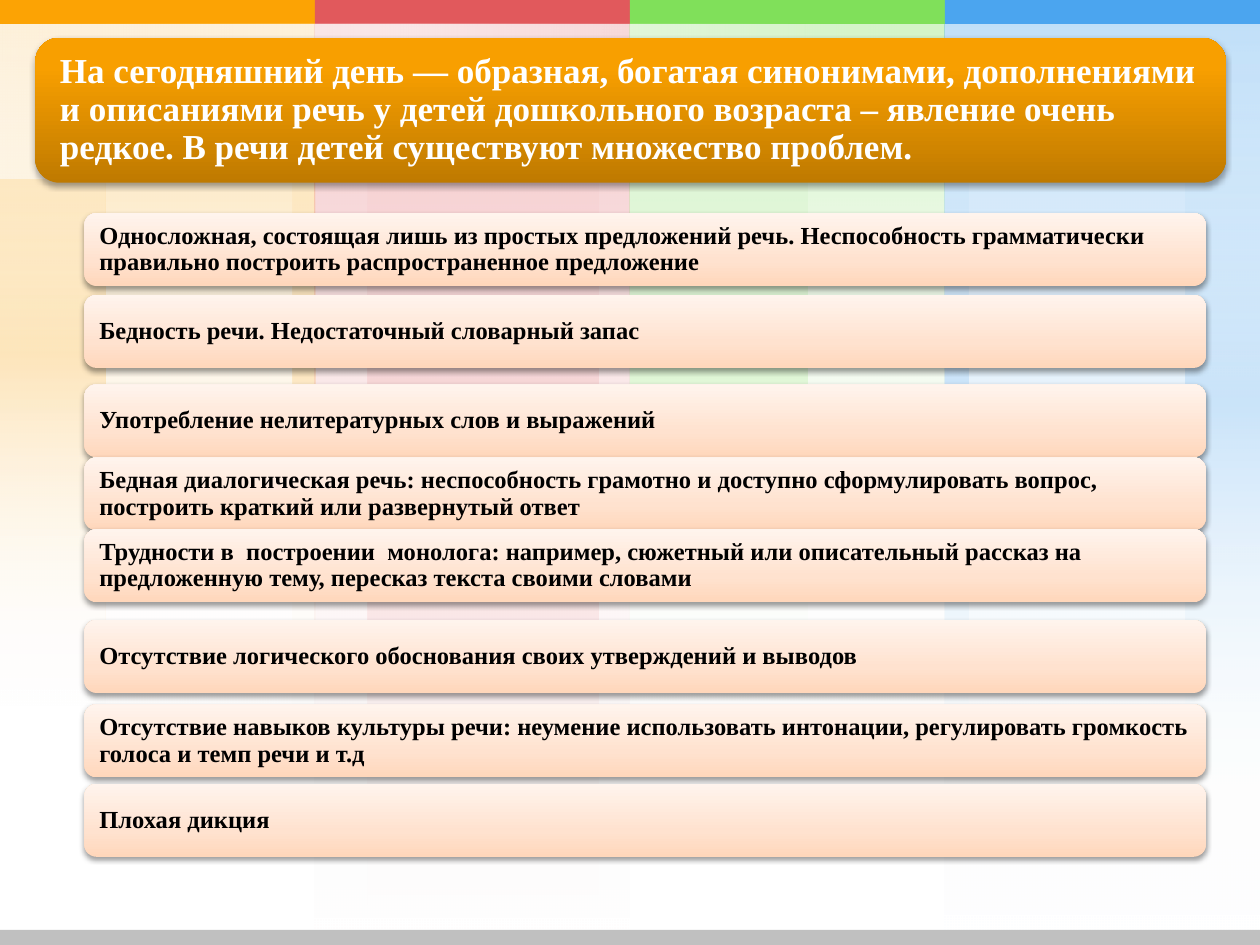
from lxml.etree import SubElement
from pptx import Presentation
from pptx.dml.color import RGBColor
from pptx.enum.shapes import MSO_SHAPE
from pptx.enum.text import MSO_ANCHOR, PP_ALIGN
from pptx.oxml.ns import qn
from pptx.util import Inches, Pt

FONT = "Times New Roman"
WHITE = "FFFFFF"
BAND_WIDTH = 2.5
BANDS = [
    ("FCA304", 5.62, [(2.32, 0.18, 5.62), (0, 0.84, 5.62)]),
    ("E1595C", 7.5, [(2.92, 1.83, 7.5)]),
    ("80E05A", 5.62, [(5, 1.41, 5.62)]),
    ("4BA5EF", 7.47, [(7.5, 0.19, 6.37), (9.41, 0.59, 6.37)]),
]
HAZE_GLOWS = [(4.16, -2.85, 0.1, 8.42), (3.06, -2.87, 0.29, 6.41)]
HAZE_VEIL = (3.15, -2.95, 1.22, 7.51)

TITLE = (
    "На сегодняшний день — образная, богатая синонимами, дополнениями и описаниями "
    "речь у детей дошкольного возраста – явление очень редкое. В речи детей "
    "существуют множество проблем."
)
TITLE_STYLE = {
    "stops": [(0, "BF7A00", 100), (80, "F89F00", 100), (100, "F9A000", 100)],
    "shadow": (35, 1.8),
    "inset": 0.14,
    "size": 20,
    "color": WHITE,
}
PROBLEM_STYLE = {
    "stops": [(0, "FFD7BB", 100), (35, "FFE2CF", 100), (100, "FFF4ED", 100)],
    "shadow": (38, 1.6),
    "inset": 0.09,
    "size": 14,
    "color": "000000",
}
PROBLEMS = [
    (1.69, "Односложная, состоящая лишь из простых предложений речь. Неспособность "
           "грамматически правильно построить распространенное предложение"),
    (2.34, "Бедность речи. Недостаточный словарный запас"),
    (3.05, "Употребление нелитературных слов и выражений"),
    (3.63, "Бедная диалогическая речь: неспособность грамотно и доступно "
           "сформулировать вопрос, построить краткий или развернутый ответ"),
    (4.2, "Трудности в  построении  монолога: например, сюжетный или описательный "
          "рассказ на предложенную тему, пересказ текста своими словами"),
    (4.92, "Отсутствие логического обоснования своих утверждений и выводов"),
    (5.59, "Отсутствие навыков культуры речи: неумение использовать интонации, "
           "регулировать громкость голоса и темп речи и т.д"),
    (6.22, "Плохая дикция"),
]


def rgb(value):
    return RGBColor.from_string(value)


def set_attributes(target, values):
    for name, value in values.items():
        setattr(target, name, value)


def add_block(slide, box, preset=MSO_SHAPE.RECTANGLE):
    shape = slide.shapes.add_shape(preset, *[Inches(length) for length in box])
    shape.shadow.inherit = False
    shape.line.fill.background()
    return shape


def add_solid(slide, box, color):
    shape = add_block(slide, box)
    shape.fill.solid()
    shape.fill.fore_color.rgb = rgb(color)


def add_color(parent, color, opacity):
    node = SubElement(parent, qn("a:srgbClr"), val=str(rgb(color)))
    if opacity < 100:
        SubElement(node, qn("a:alpha"), val=str(opacity * 1000))


def set_gradient(shape, stops, angle):
    shape.fill.gradient()
    gradient = shape._element.spPr.find(qn("a:gradFill"))
    for child in list(gradient):
        gradient.remove(child)
    gradient.set("rotWithShape", "1")
    stop_list = SubElement(gradient, qn("a:gsLst"))
    for position, color, opacity in stops:
        stop = SubElement(stop_list, qn("a:gs"), pos=str(position * 1000))
        add_color(stop, color, opacity)
    SubElement(gradient, qn("a:lin"), ang=str(angle * 60000), scaled="0")


def set_shadow(shape, opacity, distance):
    effects = shape._element.spPr.find(qn("a:effectLst"))
    shadow = SubElement(
        effects, qn("a:outerShdw"), blurRad=str(Pt(3.1)), dist=str(Pt(distance)),
        dir=str(90 * 60000), rotWithShape="0",
    )
    add_color(shadow, "000000", opacity)


def add_veil(slide, box, color, opacity, rotation=0):
    shape = add_block(slide, box)
    shape.rotation = rotation
    set_gradient(shape, [(0, color, opacity), (100, WHITE, 0)], 90)


def add_glow(slide, box, color, opacity, rotation=0):
    shape = add_block(slide, box)
    shape.rotation = rotation
    set_gradient(shape, [(0, WHITE, 0), (50, color, opacity), (100, WHITE, 0)], 90)


def add_layers(slide, veil, glows, color, opacity, rotation=0):
    add_veil(slide, veil, color, opacity, rotation)
    for glow in glows:
        add_glow(slide, glow, color, opacity, rotation)
    add_veil(slide, veil, color, opacity, rotation)


def add_background(slide):
    for index, (color, height, glows) in enumerate(BANDS):
        veil = (index * BAND_WIDTH, 0, BAND_WIDTH, height)
        boxes = [(left, 0, width, tall) for left, width, tall in glows]
        add_layers(slide, veil, boxes, color, 20)
    for index, (color, *_) in enumerate(BANDS):
        add_solid(slide, (index * BAND_WIDTH, 0, BAND_WIDTH, 0.19), color)
    add_layers(slide, HAZE_VEIL, HAZE_GLOWS, WHITE, 35, 270)
    add_solid(slide, (0, 7.38, 10, 0.12), "C0C0C0")


def add_card(slide, box, text, style):
    shape = add_block(slide, box, MSO_SHAPE.ROUNDED_RECTANGLE)
    set_gradient(shape, style["stops"], 270)
    set_shadow(shape, *style["shadow"])
    frame = shape.text_frame
    inset = Inches(style["inset"])
    set_attributes(frame, {
        "word_wrap": True,
        "vertical_anchor": MSO_ANCHOR.MIDDLE,
        "margin_left": inset,
        "margin_right": inset,
        "margin_top": inset,
        "margin_bottom": inset,
    })
    paragraph = frame.paragraphs[0]
    set_attributes(paragraph, {"alignment": PP_ALIGN.LEFT, "line_spacing": 0.9})
    run = paragraph.add_run()
    run.text = text
    set_attributes(run.font, {"name": FONT, "size": Pt(style["size"]), "bold": True})
    run.font.color.rgb = rgb(style["color"])


def main():
    presentation = Presentation()
    set_attributes(presentation, {"slide_width": Inches(10), "slide_height": Inches(7.5)})
    slide = presentation.slides.add_slide(presentation.slide_layouts[6])
    add_background(slide)
    add_card(slide, (0.28, 0.3, 9.45, 1.15), TITLE, TITLE_STYLE)
    for top, text in PROBLEMS:
        add_card(slide, (0.67, top, 8.9, 0.58), text, PROBLEM_STYLE)
    presentation.save("out.pptx")


if __name__ == "__main__":
    main()
